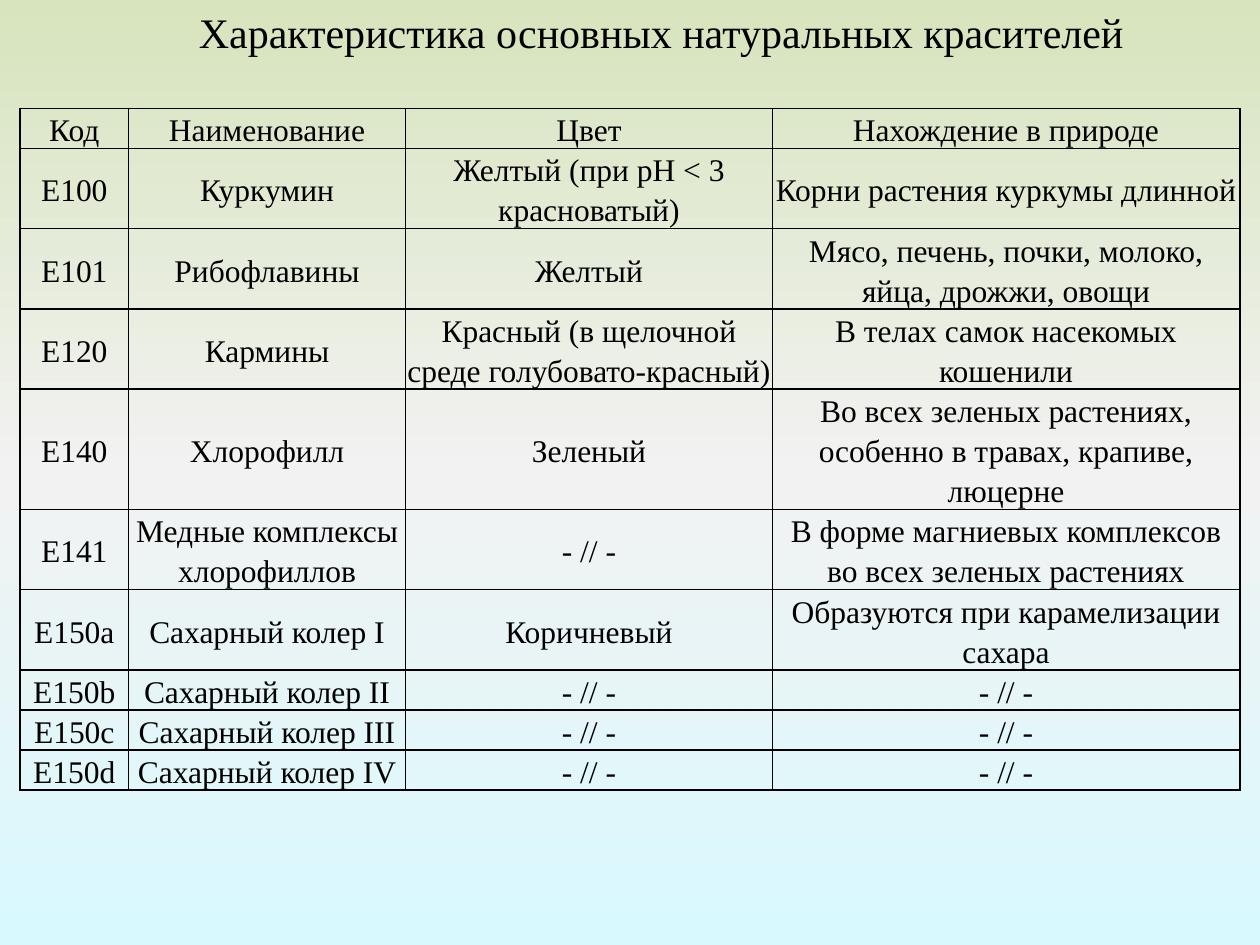
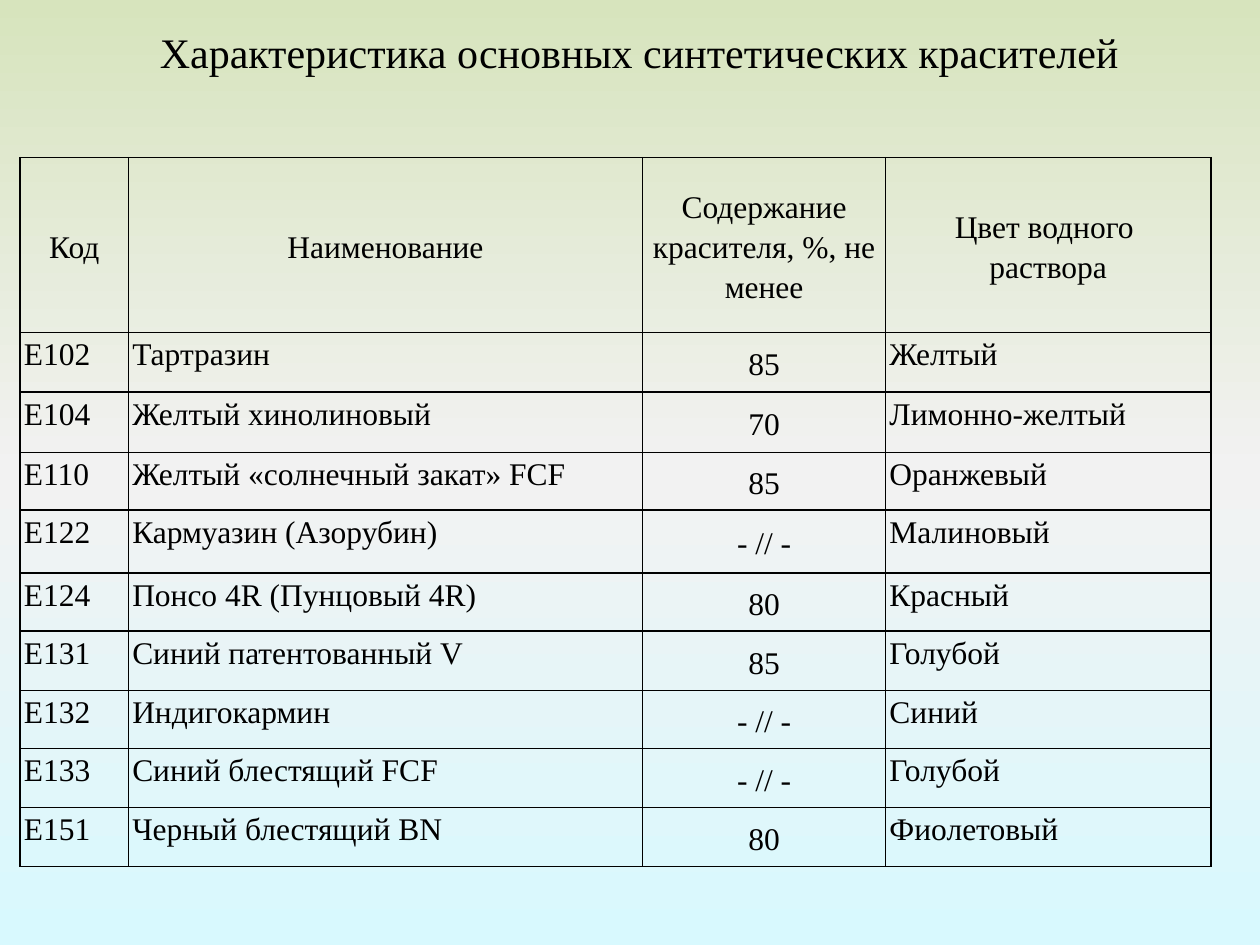
import copy
from dataclasses import dataclass

import pptx
import pptx.dml.color
import pptx.enum.text
import pptx.oxml
import pptx.oxml.ns
import pptx.util
from pptx.util import Inches

COLORS = {"ink": "000000", "top": "D7E4BD", "mid": "F2F2F2", "base": "D8F9FE"}
FACE = "Times New Roman"
DITTO = "- // -"
ALIGN = pptx.enum.text.PP_ALIGN
ANCHOR = pptx.enum.text.MSO_ANCHOR


@dataclass
class Title:
    text: str
    left: float
    top: float
    width: float
    height: float
    foot: float


@dataclass
class Grid:
    top: float
    height: float
    inset: float
    cols: list[float]
    rows: list[float]
    cells: list[tuple[str, ...]]
    centred: set[int]


@dataclass
class Page:
    title: Title
    grid: Grid


NATURAL = Page(
    Title("Характеристика основных натуральных красителей", 1.48, 0, 7.61, 0.5, 0.05),
    Grid(
        0.86, 5.93, 0.01,
        [0.86, 2.2, 2.91, 3.71],
        [0.21, 0.36, 0.36, 0.55, 0.55, 0.36, 0.36, 0.18, 0.18, 0.18],
        [
            ("Код", "Наименование", "Цвет", "Нахождение в природе"),
            ("Е100", "Куркумин", "Желтый (при рН < 3 красноватый)",
             "Корни растения куркумы длинной"),
            ("Е101", "Рибофлавины", "Желтый",
             "Мясо, печень, почки, молоко, яйца, дрожжи, овощи"),
            ("Е120", "Кармины", "Красный (в щелочной среде голубовато-красный)",
             "В телах самок насекомых кошенили"),
            ("Е140", "Хлорофилл", "Зеленый",
             "Во всех зеленых растениях, особенно в травах, крапиве, люцерне"),
            ("Е141", "Медные комплексы хлорофиллов", DITTO,
             "В форме магниевых комплексов во всех зеленых растениях"),
            ("Е150а", "Сахарный колер I", "Коричневый",
             "Образуются при карамелизации сахара"),
            ("Е150b", "Сахарный колер II", DITTO, DITTO),
            ("Е150с", "Сахарный колер III", DITTO, DITTO),
            ("Е150d", "Сахарный колер IV", DITTO, DITTO),
        ],
        {0, 1, 2, 3},
    ),
)

SYNTHETIC = Page(
    Title("Характеристика основных синтетических красителей", 1.17, 0.16, 7.89, 0.45, 0),
    Grid(
        1.25, 5.63, 0.03,
        [0.86, 4.08, 1.93, 2.58],
        [1.39, 0.47, 0.48, 0.46, 0.5, 0.46, 0.47, 0.46, 0.47, 0.47],
        [
            ("Код", "Наименование", "Содержание красителя, %, не менее",
             "Цвет водного \nраствора"),
            ("Е102", "Тартразин", "85", "Желтый"),
            ("Е104", "Желтый хинолиновый", "70", "Лимонно-желтый"),
            ("Е110", "Желтый «солнечный закат» FCF", "85", "Оранжевый"),
            ("Е122", "Кармуазин (Азорубин)", DITTO, "Малиновый"),
            ("Е124", "Понсо 4R (Пунцовый 4R)", "80", "Красный"),
            ("Е131", "Синий патентованный V", "85", "Голубой"),
            ("Е132", "Индигокармин", DITTO, "Синий"),
            ("Е133", "Синий блестящий FCF", DITTO, "Голубой"),
            ("Е151", "Черный блестящий BN", "80", "Фиолетовый"),
        ],
        {2},
    ),
)


def tint(name: str) -> pptx.dml.color.RGBColor:
    return pptx.dml.color.RGBColor.from_string(COLORS[name])


def apply(target, values: dict) -> None:
    for name, value in values.items():
        setattr(target, name, value)


def style(frame, size: int, form: dict) -> None:
    for para in frame.paragraphs:
        apply(para, form)
        for run in para.runs:
            apply(run.font, {"name": FACE, "size": pptx.util.Pt(size), "bold": False})
            run.font.color.rgb = tint("ink")


def paint(slide) -> None:
    fill = slide.background.fill
    fill.gradient()
    fill.gradient_angle = 270
    stops = next(slide.element.iter(pptx.oxml.ns.qn("a:gsLst")))
    stops.insert(1, copy.deepcopy(stops[0]))
    for stop, name, place in zip(fill.gradient_stops, ("top", "mid", "base"), (0, 0.5, 1)):
        stop.color.rgb = tint(name)
        stop.position = place


def border(cell) -> None:
    props = cell._tc.get_or_add_tcPr()
    for side in "LRTB":
        props.append(pptx.oxml.parse_xml(
            f'<a:ln{side} {pptx.oxml.ns.nsdecls("a")} w="12700"><a:solidFill>'
            f'<a:srgbClr val="{COLORS["ink"]}"/></a:solidFill></a:ln{side}>'))


def head(slide, title: Title) -> None:
    box = slide.shapes.add_textbox(
        *map(Inches, (title.left, title.top, title.width, title.height)))
    frame = box.text_frame
    frame.text = title.text
    apply(frame, {
        "word_wrap": False,
        "auto_size": pptx.enum.text.MSO_AUTO_SIZE.SHAPE_TO_FIT_TEXT,
        "vertical_anchor": ANCHOR.MIDDLE,
        "margin_bottom": Inches(title.foot),
    })
    style(frame, 24, {"alignment": ALIGN.LEFT})


def chart(slide, grid: Grid) -> None:
    shape = slide.shapes.add_table(
        len(grid.rows), len(grid.cols), Inches(0.16), Inches(grid.top),
        Inches(sum(grid.cols)), Inches(grid.height))
    table = shape.table
    apply(table, {"first_row": False, "horz_banding": False})
    for col, width in zip(table.columns, grid.cols):
        col.width = Inches(width)
    for row, height in zip(table.rows, grid.rows):
        row.height = Inches(height)
    shape.height = Inches(grid.height)
    for r, texts in enumerate(grid.cells):
        for c, text in enumerate(texts):
            cell = table.cell(r, c)
            mid = r == 0 or c in grid.centred
            cell.text = text
            apply(cell, {
                "margin_left": Inches(grid.inset),
                "margin_right": Inches(grid.inset),
                "margin_top": 0,
                "margin_bottom": 0,
                "vertical_anchor": ANCHOR.MIDDLE if mid else ANCHOR.TOP,
            })
            border(cell)
            cell.fill.background()
            style(cell.text_frame, 18, {
                "alignment": ALIGN.CENTER if mid else ALIGN.JUSTIFY,
                "line_spacing": 1.15,
            })


def main() -> None:
    deck = pptx.Presentation()
    apply(deck, {"slide_width": Inches(10), "slide_height": Inches(7.5)})
    for page in (NATURAL, SYNTHETIC):
        slide = deck.slides.add_slide(deck.slide_layouts[6])
        paint(slide)
        chart(slide, page.grid)
        head(slide, page.title)
    deck.save("out.pptx")


if __name__ == "__main__":
    main()
